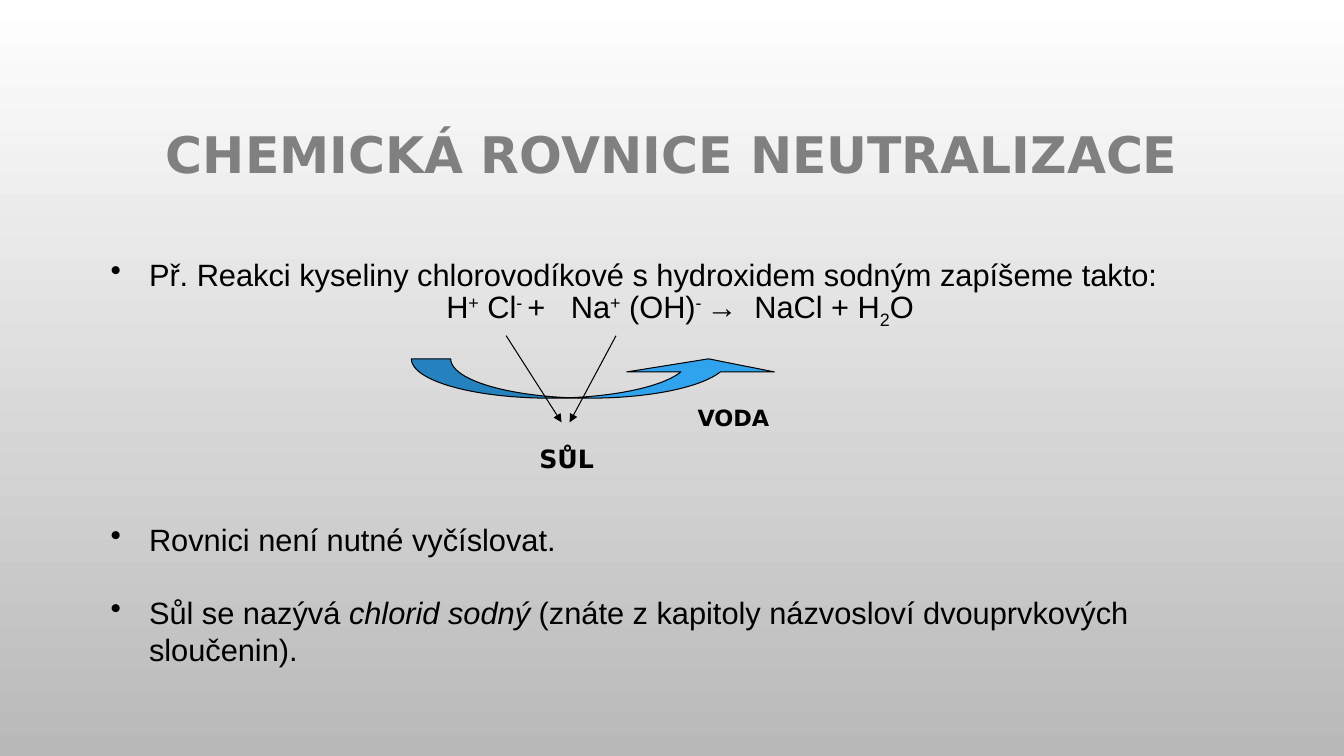
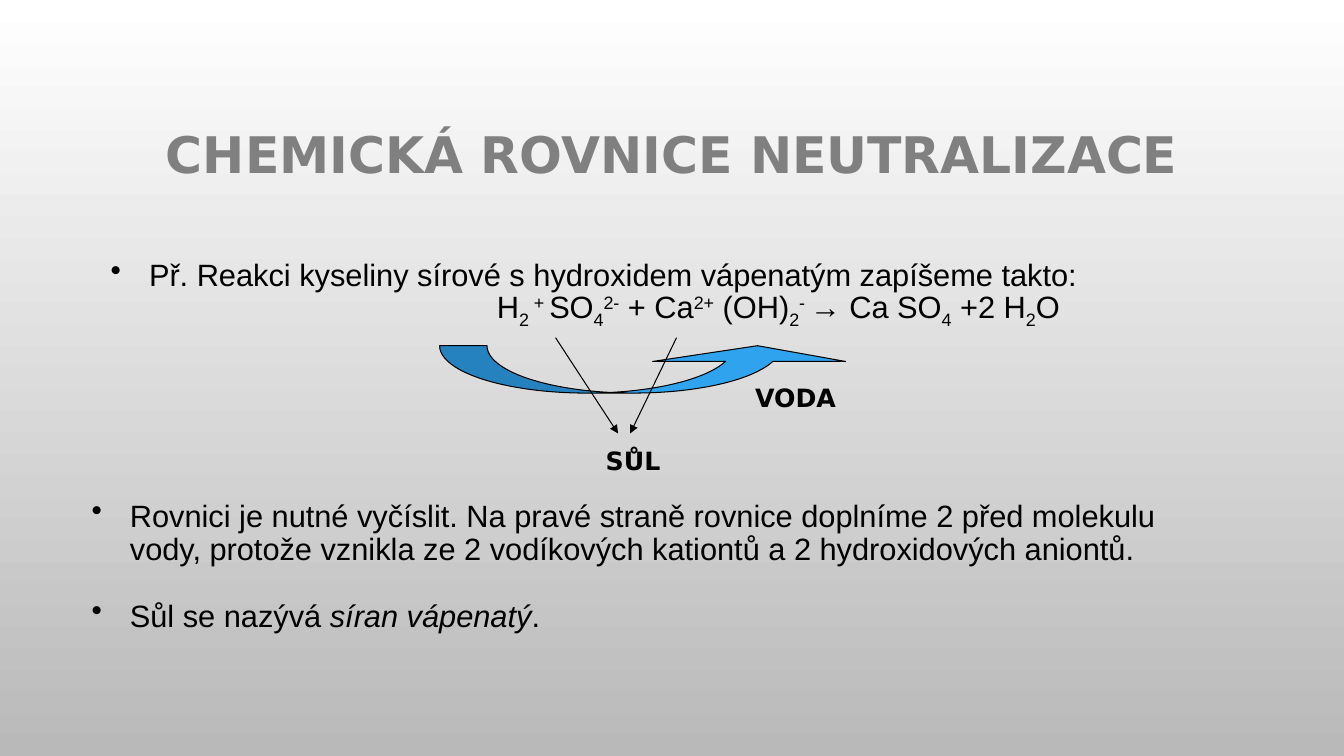
from lxml import etree
from pptx import Presentation
from pptx.dml.color import RGBColor
from pptx.enum.shapes import MSO_CONNECTOR, MSO_SHAPE
from pptx.enum.text import MSO_ANCHOR, PP_ALIGN
from pptx.oxml.ns import qn
from pptx.util import Inches, Pt

CENTER = PP_ALIGN.CENTER
LEFT = PP_ALIGN.LEFT
MIDDLE = MSO_ANCHOR.MIDDLE
STRAIGHT = MSO_CONNECTOR.STRAIGHT
CURVED_UP_ARROW = MSO_SHAPE.CURVED_UP_ARROW

BLACK = "000000"
GRAY = "808080"
BLUE = "2FA3EE"
BACKGROUND = ("FFFFFF", "B9B9B9")
TITLE = "CHEMICKÁ ROVNICE NEUTRALIZACE"
BODY_FONT = "Arial"
HEADING_FONT = "DejaVu Sans"
BODY_SIZE = 22
LINE_PITCH = 26.4
TIGHT_PITCH = 23.8
BULLET_INDENT = 0.38

PLAIN = {}
ITALIC = {"i": "1"}
SUPER = {"baseline": "30000"}
SUB = {"baseline": "-25000"}
WIDE = {"spc": "600"}
WIDER = {"spc": "1220"}


def color(value):
    return RGBColor.from_string(value)


class Deck:
    def __init__(self):
        self.presentation = Presentation()
        self.presentation.slide_width = Inches(13.33)
        self.presentation.slide_height = Inches(7.5)
        fill = self.presentation.slide_master.background.fill
        fill.gradient()
        fill.gradient_angle = 270
        for stop, value in zip(fill.gradient_stops, BACKGROUND):
            stop.color.rgb = color(value)
        self.slide = None

    def add_slide(self, title):
        layout = self.presentation.slide_layouts[5]
        self.slide = self.presentation.slides.add_slide(layout)
        shape = self.slide.shapes.title
        shape.left, shape.top = Inches(1), Inches(0.68)
        shape.width, shape.height = Inches(11.33), Inches(1.75)
        shape.text_frame.vertical_anchor = MIDDLE
        paragraph = shape.text_frame.paragraphs[0]
        paragraph.alignment = CENTER
        paragraph.line_spacing = 0.9
        self.add_run(paragraph, TITLE if title is None else title, HEADING_FONT, 36, GRAY, True)

    def add_run(self, paragraph, text, font, size, text_color=BLACK, bold=False, style=PLAIN):
        run = paragraph.add_run()
        run.text = text
        run.font.name = font
        run.font.size = Pt(size)
        run.font.bold = bold
        run.font.color.rgb = color(text_color)
        for name, value in style.items():
            run._r.get_or_add_rPr().set(name, value)

    def add_text_frame(self, shapes, left, top, width, height):
        shape = shapes.add_textbox(Inches(left), Inches(top), Inches(width), Inches(height))
        shape.text_frame.word_wrap = True
        return shape.text_frame

    def add_body(self, left, top, width, height, pitch):
        frame = self.add_text_frame(self.slide.shapes, left, top, width, height)
        frame.paragraphs[0].line_spacing = Pt(pitch)
        return frame

    def add_paragraph(self, frame, runs, space_before=0):
        first = frame.paragraphs[0]
        paragraph = frame.add_paragraph() if first.runs else first
        paragraph.line_spacing = first.line_spacing
        if space_before:
            paragraph.space_before = Pt(space_before)
        for text, style in runs:
            self.add_run(paragraph, text, BODY_FONT, BODY_SIZE, style=style)
        return paragraph

    def add_bullet(self, frame, runs, space_before=0):
        paragraph = self.add_paragraph(frame, runs, space_before)
        paragraph.alignment = LEFT
        properties = paragraph._p.get_or_add_pPr()
        properties.set("marL", str(Inches(BULLET_INDENT)))
        properties.set("indent", str(-Inches(BULLET_INDENT)))
        etree.SubElement(properties, qn("a:buChar")).set("char", "•")

    def add_equation(self, frame, runs, margin):
        paragraph = self.add_paragraph(frame, runs)
        paragraph.alignment = CENTER
        paragraph._p.get_or_add_pPr().set("marL", str(Inches(margin)))

    def add_curved_arrow(self, shapes, left, top, width, height, adjustments):
        shape = shapes.add_shape(
            CURVED_UP_ARROW, Inches(left), Inches(top), Inches(width), Inches(height)
        )
        shape.shadow.inherit = False
        for index, value in enumerate(adjustments):
            shape.adjustments[index] = value
        shape.fill.solid()
        shape.fill.fore_color.rgb = color(BLUE)
        shape.line.color.rgb = color(BLACK)
        shape.line.width = Pt(0.75)

    def add_arrow(self, shapes, start_x, start_y, end_x, end_y):
        connector = shapes.add_connector(
            STRAIGHT, Inches(start_x), Inches(start_y), Inches(end_x), Inches(end_y)
        )
        connector.line.color.rgb = color(BLACK)
        connector.line.width = Pt(0.75)
        line = connector.line._get_or_add_ln()
        etree.SubElement(line, qn("a:tailEnd")).set("type", "triangle")
        etree.SubElement(connector._element.spPr, qn("a:effectLst"))

    def add_label(self, shapes, text, left, top, width, size):
        frame = self.add_text_frame(shapes, left, top, width, 0.4)
        self.add_run(frame.paragraphs[0], text, HEADING_FONT, size, bold=True)

    def add_diagram(self, curve, adjustments, arrow_starts, arrow_ends, arrow_top, arrow_bottom,
                    salt, water, water_size):
        shapes = self.slide.shapes.add_group_shape().shapes
        self.add_curved_arrow(shapes, *curve, adjustments)
        for start, end in zip(arrow_starts, arrow_ends):
            self.add_arrow(shapes, start, arrow_top, end, arrow_bottom)
        self.add_label(shapes, "SŮL", *salt, 18)
        self.add_label(shapes, "VODA", *water, water_size)


def build_sodium_chloride(deck):
    deck.add_slide(TITLE)
    body = deck.add_body(1, 2.49, 11.33, 5.15, LINE_PITCH)
    deck.add_bullet(body, [
        ("Př. Reakci kyseliny chlorovodíkové s hydroxidem sodným zapíšeme takto:", PLAIN),
    ])
    deck.add_equation(body, [
        ("H", PLAIN), ("+", SUPER), (" Cl", PLAIN), ("- ", SUPER), ("+", PLAIN),
        (" ", WIDER), ("Na", PLAIN), ("+", SUPER), (" (OH)", PLAIN), ("- ", SUPER),
        ("→", PLAIN), (" ", WIDE), ("NaCl + H", PLAIN), ("2", SUB), ("O", PLAIN),
    ], 0.16)
    deck.add_bullet(body, [("Rovnici není nutné vyčíslovat.", PLAIN)], 136)
    deck.add_bullet(body, [
        ("Sůl se nazývá ", PLAIN), ("chlorid sodný", ITALIC),
        (" (znáte z kapitoly názvosloví dvouprvkových sloučenin).", PLAIN),
    ], LINE_PITCH)
    deck.add_diagram(
        curve=(4.08, 3.56, 3.68, 0.39), adjustments=(1.878, 3.755, 0.333),
        arrow_starts=(5.02, 6.11), arrow_ends=(5.57, 5.65), arrow_top=3.33, arrow_bottom=4.19,
        salt=(5.25, 4.35, 0.78), water=(6.82, 3.96, 0.94), water_size=16,
    )


def build_calcium_sulfate(deck):
    deck.add_slide(TITLE)
    example = deck.add_body(1, 2.49, 11.33, 1.95, LINE_PITCH)
    deck.add_bullet(example, [
        ("Př. Reakci kyseliny sírové s hydroxidem vápenatým zapíšeme takto:", PLAIN),
    ])
    deck.add_equation(example, [
        ("H", PLAIN), ("2 ", SUB), ("+ ", SUPER), ("SO", PLAIN), ("4", SUB), ("2-", SUPER),
        (" + Ca", PLAIN), ("2+", SUPER), (" (OH)", PLAIN), ("2", SUB), ("- ", SUPER),
        ("→ Ca SO", PLAIN), ("4", SUB), (" +2 H", PLAIN), ("2", SUB), ("O", PLAIN),
    ], 2.11)
    deck.add_diagram(
        curve=(4.36, 3.43, 4.11, 0.47), adjustments=(2.035, 4.069, 0.333),
        arrow_starts=(5.51, 6.71), arrow_ends=(6.13, 6.25), arrow_top=3.35, arrow_bottom=4.3,
        salt=(5.91, 4.37, 0.77), water=(7.39, 3.74, 1.01), water_size=18,
    )
    notes = deck.add_body(0.81, 4.91, 11.52, 1.43, TIGHT_PITCH)
    deck.add_bullet(notes, [
        ("Rovnici je nutné vyčíslit. Na pravé straně rovnice doplníme 2 před molekulu vody, "
         "protože vznikla ze 2 vodíkových kationtů a 2 hydroxidových aniontů.", PLAIN),
    ])
    deck.add_bullet(notes, [
        ("Sůl se nazývá ", PLAIN), ("síran vápenatý", ITALIC), (".", PLAIN),
    ], TIGHT_PITCH)


def main():
    deck = Deck()
    build_sodium_chloride(deck)
    build_calcium_sulfate(deck)
    deck.presentation.save("out.pptx")


if __name__ == "__main__":
    main()
